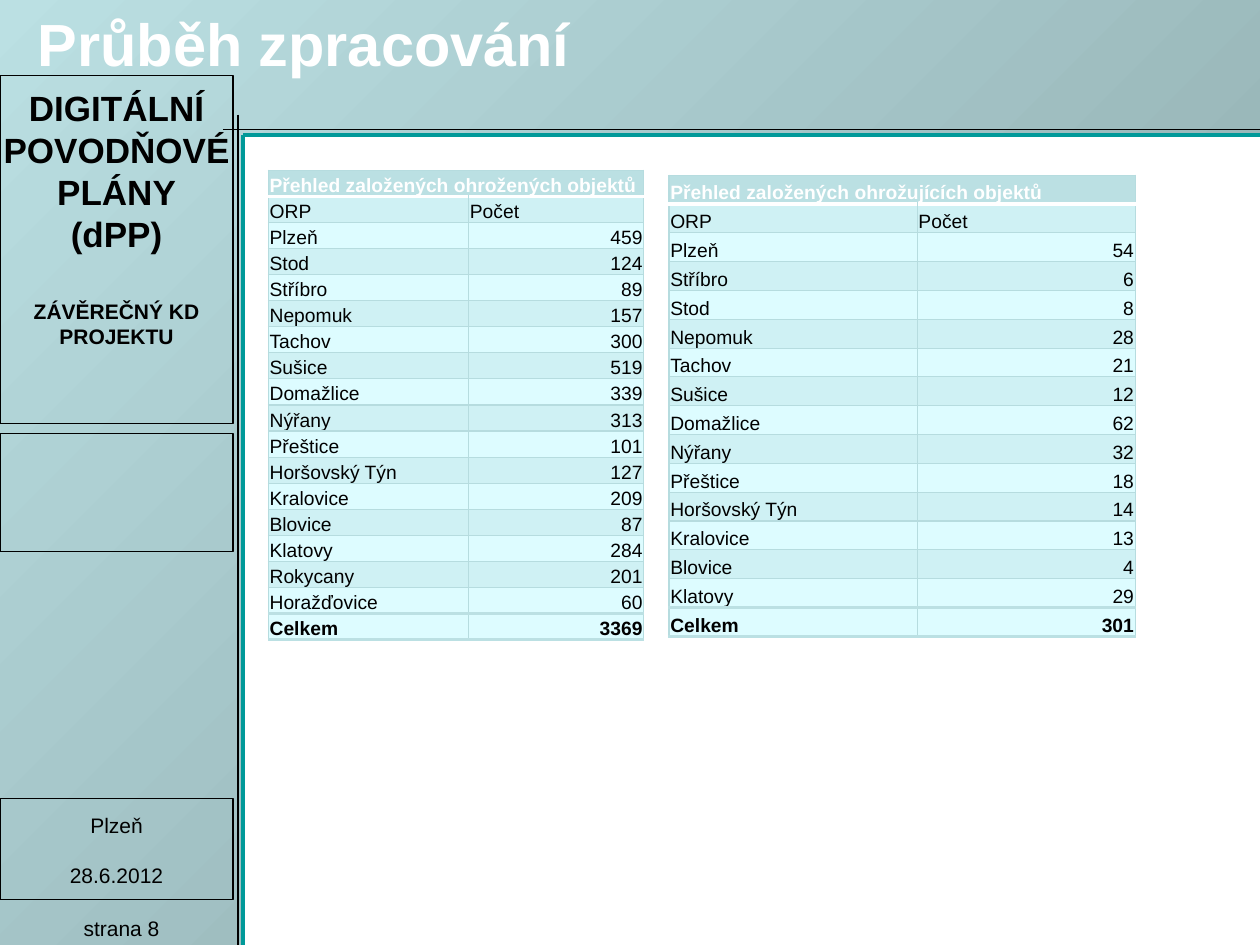
from pptx import Presentation, util as u
from pptx.dml.color import RGBColor
from pptx.enum import shapes, text
from pptx.oxml import parse_xml
from pptx.oxml.ns import nsdecls
from pptx.oxml.xmlchemy import OxmlElement

HEX = {"pale": "BBE0E3", "deep": "86A0A2", "teal": "009999", "ink": "000000",
       "white": "FFFFFF", "edge": "B6DCDF", "even": "DDFCFF", "odd": "CFF1F4"}
COLS, ROWS = 100, 75
THREATENED = [
    ("Plzeň", 459), ("Stod", 124), ("Stříbro", 89), ("Nepomuk", 157),
    ("Tachov", 300), ("Sušice", 519), ("Domažlice", 339), ("Nýřany", 313),
    ("Přeštice", 101), ("Horšovský Týn", 127), ("Kralovice", 209),
    ("Blovice", 87), ("Klatovy", 284), ("Rokycany", 201),
    ("Horažďovice", 60), ("Celkem", 3369)]
THREATS = [
    ("Plzeň", 54), ("Stříbro", 6), ("Stod", 8), ("Nepomuk", 28),
    ("Tachov", 21), ("Sušice", 12), ("Domažlice", 62), ("Nýřany", 32),
    ("Přeštice", 18), ("Horšovský Týn", 14), ("Kralovice", 13),
    ("Blovice", 4), ("Klatovy", 29), ("Celkem", 301)]


def rgb(name):
    return RGBColor.from_string(HEX[name])


class Deck:
    """Holds the style and the current slide; lengths are grid columns and rows."""

    def __init__(self):
        self.prs = Presentation()
        self.prs.slide_width, self.prs.slide_height = u.Inches(10), u.Inches(7.5)
        self.font = "Arial"
        self.slide = self.prs.slides.add_slide(self.prs.slide_layouts[5])
        self.items = self.slide.shapes

    def x(self, col):
        return round(self.prs.slide_width * col / COLS)

    def y(self, row):
        return round(self.prs.slide_height * row / ROWS)

    def box(self, left, top, wide, high):
        return self.x(left), self.y(top), self.x(wide), self.y(high)

    def style(self, par, size, color="ink", bold=False, align="LEFT"):
        par.alignment = getattr(text.PP_ALIGN, align)
        for run in par.runs:
            run.font.name, run.font.size = self.font, u.Pt(size)
            run.font.bold, run.font.color.rgb = bold, rgb(color)

    def title(self, words, *area):
        head = self.items.title
        head.left, head.top, head.width, head.height = self.box(*area)
        frame = head.text_frame
        frame.text = words
        frame.vertical_anchor = text.MSO_ANCHOR.BOTTOM
        frame.auto_size = text.MSO_AUTO_SIZE.NONE
        self.style(frame.paragraphs[0], 34, "white", True)
        self.items._spTree.append(head._element)

    def band(self, points):
        pts = [(self.x(c), self.y(r)) for c, r in points]
        pen = self.items.build_freeform(*pts[0])
        pen.add_line_segments(pts[1:])
        shape = pen.convert_to_shape()
        shape.shadow.inherit = False
        shape.line.fill.background()
        shape.fill.gradient()
        shape.fill.gradient_angle = 315
        for stop, name, pos in zip(shape.fill.gradient_stops, ("pale", "deep"), (0, 1)):
            stop.color.rgb, stop.position = rgb(name), pos

    def label(self, area, lines, wrap=True):
        """Each line is (words, size, bold, space before in points)."""
        frame = self.items.add_textbox(*self.box(*area)).text_frame
        frame.word_wrap = wrap
        frame.text = "\n".join(line[0] for line in lines)
        for par, (_, size, bold, gap) in zip(frame.paragraphs, lines):
            self.style(par, size, bold=bold, align="CENTER")
            if gap:
                par.space_before = u.Pt(gap)

    def line(self, x1, y1, x2, y2, color, width):
        rule = self.items.add_connector(shapes.MSO_CONNECTOR.STRAIGHT, self.x(x1),
                                        self.y(y1), self.x(x2), self.y(y2))
        rule.line.color.rgb, rule.line.width = rgb(color), u.Pt(width)
        rule._element.spPr.append(OxmlElement("a:effectLst"))

    def frame(self, *area):
        rect = self.items.add_shape(shapes.MSO_SHAPE.RECTANGLE, *self.box(*area))
        rect.shadow.inherit = False
        rect.fill.background()
        rect.line.color.rgb, rect.line.width = rgb("ink"), u.Pt(0.75)

    def border(self, cell, top, bottom):
        thin = ("edge", 0.75)
        for side, (name, width) in zip("LRTB", (thin, thin, top, bottom)):
            cell._tc.get_or_add_tcPr().append(parse_xml(
                f'<a:ln{side} {nsdecls("a")} w="{u.Pt(width)}"><a:solidFill>'
                f'<a:srgbClr val="{HEX[name]}"/></a:solidFill></a:ln{side}>'))

    def table(self, area, widths, head, data):
        rows = [(head, ""), ("ORP", "Počet")] + data
        last = len(rows) - 1
        grid = self.items.add_table(len(rows), 2, *self.box(*area)).table
        grid.first_row = grid.horz_banding = False
        for col, wide in zip(grid.columns, widths):
            col.width = self.x(wide)
        # rules[i] lies above row i
        rules = [("edge", 0.75)] * (last + 2)
        rules[1], rules[last], rules[-1] = ("white", 2), ("pale", 2), ("pale", 2)
        for i, row in enumerate(rows):
            grid.rows[i].height = self.y(area[3] / len(rows))
            for j, value in enumerate(row):
                cell = grid.cell(i, j)
                cell.margin_left = cell.margin_right = cell.margin_top = u.Inches(0.01)
                cell.margin_bottom = 0
                cell.vertical_anchor = text.MSO_ANCHOR.BOTTOM
                self.border(cell, rules[i], rules[i + 1])
                cell.fill.solid()
                cell.fill.fore_color.rgb = rgb("pale" if i == 0 else "odd" if i % 2 and i < last else "even")
                cell.text_frame.text = str(value)
                self.style(cell.text_frame.paragraphs[0], 11, "ink" if i else "white",
                           i in (0, last), "RIGHT" if j and i > 1 else "LEFT")
        grid.cell(0, 0).merge(grid.cell(0, 1))


def main():
    deck = Deck()
    deck.band([(-0.4, 75.3), (19.3, 75.3), (19.3, 10.8), (100.4, 10.8),
               (100.4, -0.3), (-0.4, -0.3)])
    deck.label((-1, 6.4, 20.5, 22), [
        ("DIGITÁLNÍ POVODŇOVÉ PLÁNY", 20, True, 0), ("(dPP)", 20, True, 0),
        ("ZÁVĚREČNÝ KD PROJEKTU", 12, True, 25)])
    deck.label((-0.6, 64, 19.7, 7.1), [("Plzeň", 12, False, 0), ("28.6.2012", 12, False, 14)])
    deck.label((5.1, 72.2, 9.1, 2.8), [("strana 8", 12, False, 0)], wrap=False)
    for ends in ((19.3, 75, 19.3, 10.7), (19.3, 10.7, 100, 10.7)):
        deck.line(*ends, "teal", 2.25)
    for ends in ((18.9, 9.1, 18.9, 75), (17.7, 10.3, 100, 10.3)):
        deck.line(*ends, "ink", 0.75)
    for top, high in ((6, 27.6), (34.4, 9.4), (63.4, 8)):
        deck.frame(0, top, 18.5, high)
    deck.title("Průběh zpracování", 2, 0, 93.3, 6.7)
    deck.table((21.3, 13.5, 29.8, 37.3), (15.9, 13.9),
               "Přehled založených ohrožených objektů", THREATENED)
    deck.table((53.1, 13.9, 37, 36.6), (19.7, 17.3),
               "Přehled založených ohrožujících objektů", THREATS)
    deck.prs.save("out.pptx")


if __name__ == "__main__":
    main()
